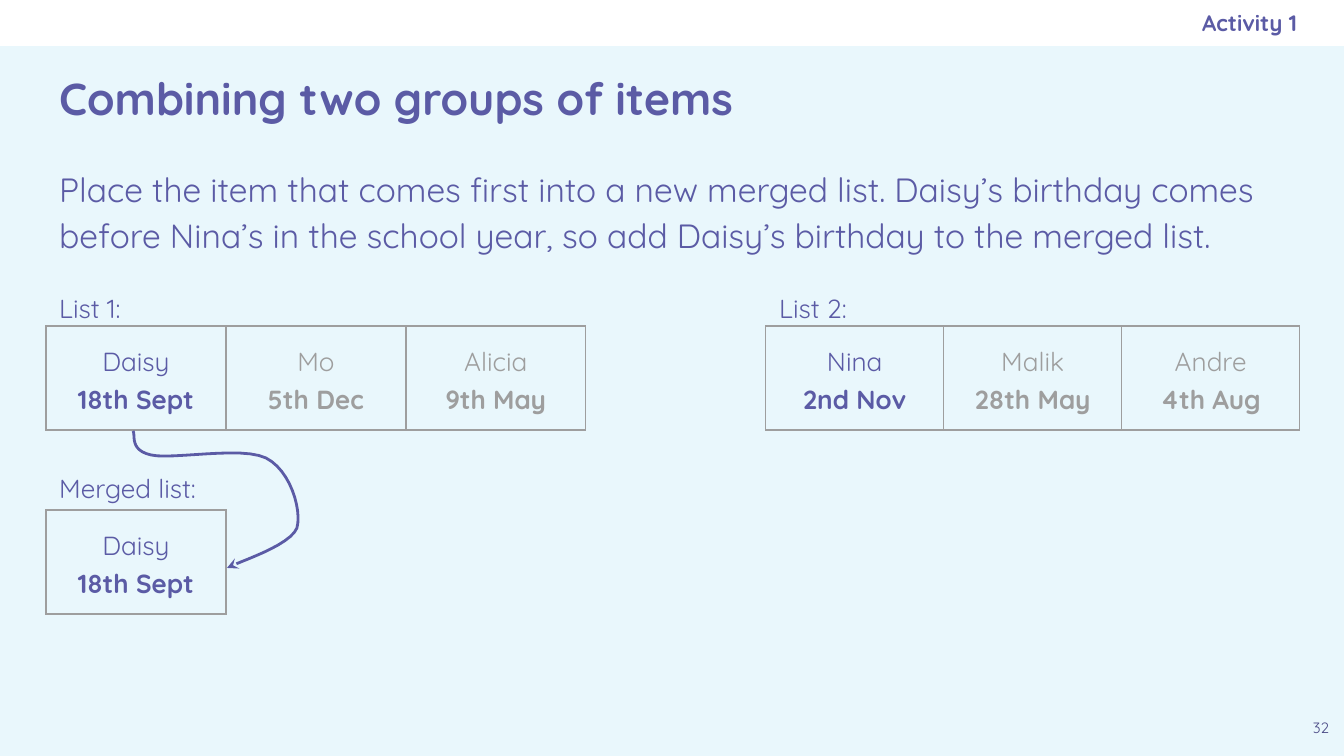
"""Build the slide on merging two sorted birthday lists."""
from lxml.etree import SubElement
from pptx import Presentation
from pptx.dml.color import RGBColor
from pptx.enum.shapes import MSO_SHAPE as Shape
from pptx.enum.text import MSO_ANCHOR as Anchor, PP_ALIGN as Align
from pptx.oxml import parse_xml
from pptx.oxml.ns import nsdecls, qn
from pptx.util import Emu, Pt

INK = {"back": "E9F7FC", "bar": "FFFFFF", "main": "5B5BA5",
       "page": "494985", "dim": "9E9E9E"}
FONT = "Quicksand"
LEFT, WIDE, ROW, PAD = 46, 1253, 104, 13.44

TITLE = "Combining two groups of items"
BODY = ("Place the item that comes first into a new merged list. Daisy’s birthday comes "
        "before Nina’s in the school year, so add Daisy’s birthday to the merged list.")
LABELS = [("List 1:", LEFT, 274), ("List 2:", 766, 274), ("Merged list:", LEFT, 454)]
DAISY = ("Daisy", "18th Sept", "main")
LISTS = [DAISY, ("Mo", "5th Dec", "dim"), ("Alicia", "9th May", "dim"), None,
         ("Nina", "2nd Nov", "main"), ("Malik", "28th May", "dim"),
         ("Andre", "4th Aug", "dim")]
TABLES = [(326, LISTS, [180] * 4 + [178] * 3), (510, [DAISY], [180])]
START = (133, 431)
CURVES = [((136, 435), (129, 450), (151, 455)),
          ((172, 460), (241, 446), (266, 458)),
          ((290, 470), (302, 509), (297, 528)),
          ((290, 546), (238, 562), (227, 568))]
STEPS = 12


def px(num):
    return Emu(round(num * 914400 / 134.4))


def rgb(name):
    return RGBColor.from_string(INK[name])


def style(para, size, ink="main", bold=False, align=Align.LEFT, gap=1.0):
    para.alignment, para.line_spacing = align, gap
    font = para.font
    font.name, font.size, font.bold = FONT, Pt(size), bold
    font.color.rgb = rgb(ink)


def add_text(slide, text, box, size, anchor=Anchor.TOP, right=PAD, **look):
    frame = slide.shapes.add_textbox(*map(px, box)).text_frame
    frame.word_wrap, frame.vertical_anchor = True, anchor
    frame.margin_left = frame.margin_top = frame.margin_bottom = px(PAD)
    frame.margin_right = px(right)
    frame.text = text
    style(frame.paragraphs[0], size, **look)


def edge(cell, sides):
    props = cell._tc.get_or_add_tcPr()
    for spot, side in enumerate("LRTB"):
        paint = (f'<a:solidFill><a:srgbClr val="{INK["dim"]}"/></a:solidFill>'
                 if side in sides else "<a:noFill/>")
        props.insert(spot, parse_xml(
            f'<a:ln{side} {nsdecls("a")} w="9525">{paint}</a:ln{side}>'))


def add_list(slide, top, items, cols):
    grid = slide.shapes.add_table(1, len(cols), px(LEFT), px(top),
                                  px(sum(cols)), px(ROW)).table
    grid.first_row = grid.horz_banding = False
    for spot, (item, width) in enumerate(zip(items, cols)):
        grid.columns[spot].width = px(width)
        cell = grid.cell(0, spot)
        cell.fill.background()
        edge(cell, "LRTB" if item else "LR")
        if not item:
            continue
        name, date, ink = item
        cell.vertical_anchor = Anchor.MIDDLE
        cell.margin_left = cell.margin_right = px(PAD)
        cell.margin_top = cell.margin_bottom = px(PAD)
        cell.text = f"{name}\n{date}"
        for para, bold in zip(cell.text_frame.paragraphs, (False, True)):
            style(para, 14, ink, bold, Align.CENTER, 1.15)


def trace(start, curves):
    for one, two, end in curves:
        for step in range(1, STEPS + 1):
            t = step / STEPS
            u = 1 - t
            yield tuple(px(u**3 * a + 3 * u * u * t * b + 3 * u * t * t * c + t**3 * d)
                        for a, b, c, d in zip(start, one, two, end))
        start = end


def add_arrow(slide):
    pen = slide.shapes.build_freeform(*map(px, START))
    pen.add_line_segments(list(trace(START, CURVES)), close=False)
    arrow = pen.convert_to_shape()
    arrow.shadow.inherit = False
    arrow.fill.background()
    arrow.line.color.rgb = rgb("main")
    arrow.line.width = Pt(1.5)
    SubElement(arrow.line._get_or_add_ln(), qn("a:tailEnd"), type="stealth")


def main():
    deck = Presentation()
    deck.slide_width, deck.slide_height = px(1344), px(756)
    slide = deck.slides.add_slide(deck.slide_layouts[6])
    slide.background.fill.solid()
    slide.background.fill.fore_color.rgb = rgb("back")

    bar = slide.shapes.add_shape(Shape.RECTANGLE, 0, 0, px(1344), px(46))
    bar.shadow.inherit = False
    bar.fill.solid()
    bar.fill.fore_color.rgb = rgb("bar")
    bar.line.fill.background()

    add_text(slide, BODY, (LEFT, 149, WIDE, 124), 18, gap=1.15)
    add_text(slide, TITLE, (LEFT, 46, WIDE, 103), 24, Anchor.MIDDLE, bold=True)
    add_text(slide, "32", (1298, 710, 46, 46), 8, ink="page", align=Align.CENTER)
    add_text(slide, "Activity 1", (773, 0, 524, 46), 12, Anchor.MIDDLE, 0,
             bold=True, align=Align.RIGHT)
    for text, left, top in LABELS:
        add_text(slide, text, (left, top, 188, 56), 14, gap=1.15)
    for top, items, cols in TABLES:
        add_list(slide, top, items, cols)
    add_arrow(slide)
    deck.save("out.pptx")


if __name__ == "__main__":
    main()
